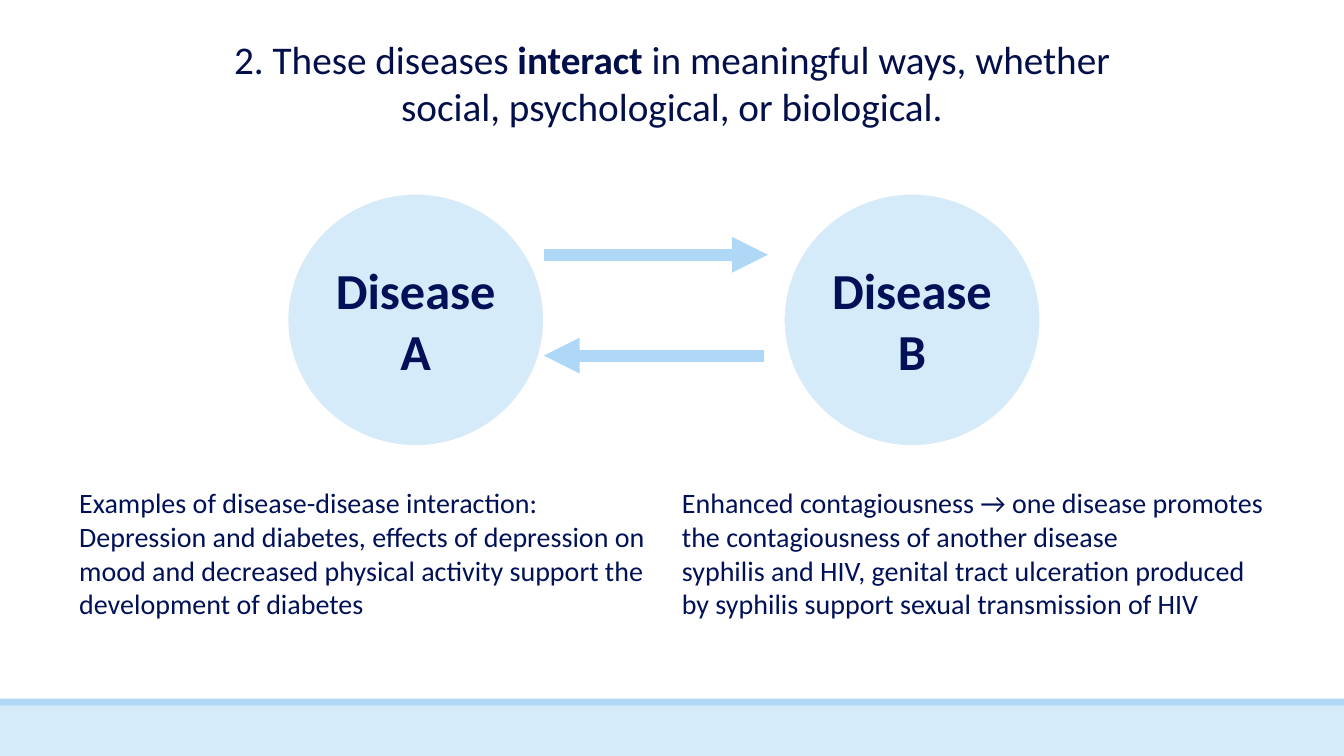
from dataclasses import dataclass

from lxml import etree
from pptx import Presentation
from pptx.dml.color import RGBColor
from pptx.enum import shapes, text
from pptx.oxml import ns
from pptx.util import Pt

TITLE = [
    ("2. These diseases ", False),
    ("interact", True),
    (" in meaningful ways, whether social, psychological, or biological.", False),
]
DISEASES = ["Disease A", "Disease B"]
EXAMPLES = [
    ["Examples of disease-disease interaction: Depression and diabetes, effects of "
     "depression on mood and decreased physical activity support the development of diabetes"],
    ["Enhanced contagiousness → one disease promotes the contagiousness of another disease",
     "syphilis and HIV, genital tract ulceration produced by syphilis support sexual "
     "transmission of HIV"],
]


@dataclass(frozen=True)
class Theme:
    font: str = "Calibri"
    title_color: str = "020F4A"
    text_color: str = "001158"
    accent: str = "AED8F5"
    pale: str = "D6EBFA"
    outline: str = "FFFFFF"
    title_size: int = 28
    circle_size: int = 36
    body_size: int = 20
    arrow_width: float = 8.5


THEME = Theme()
WIDTH, HEIGHT = 960, 540
BAND_HEIGHT, STRIPE_HEIGHT = 36, 5
CIRCLE_LEFT, CIRCLE_TOP, CIRCLE_STEP = 205.5, 138.5, 354.5
CIRCLE_WIDTH, CIRCLE_HEIGHT = 183, 180
ARROW_LEFT = CIRCLE_LEFT + CIRCLE_WIDTH
ARROWS = [(ARROW_LEFT, 548.5, 182), (546, ARROW_LEFT, 254)]
COLUMN_WIDTH, COLUMN_TOP, COLUMN_HEIGHT = 430.5, 343.5, 104.5
COLUMN_LEFT = 49.5


def color(value):
    return RGBColor.from_string(value)


def style_run(run, size, value, bold=False):
    run.font.name = THEME.font
    run.font.size = Pt(size)
    run.font.bold = bold
    run.font.color.rgb = color(value)


def add_shape(slide, kind, left, top, width, height, fill):
    shape = slide.shapes.add_shape(kind, Pt(left), Pt(top), Pt(width), Pt(height))
    shape.shadow.inherit = False
    shape.fill.solid()
    shape.fill.fore_color.rgb = color(fill)
    shape.line.fill.background()
    return shape


def add_text_box(slide, left, top, width, height):
    box = slide.shapes.add_textbox(Pt(left), Pt(top), Pt(width), Pt(height))
    box.text_frame.word_wrap = True
    return box.text_frame


def add_title(slide):
    paragraph = add_text_box(slide, 128, 21.5, 704, 97).paragraphs[0]
    paragraph.alignment = text.PP_ALIGN.CENTER
    for words, bold in TITLE:
        run = paragraph.add_run()
        run.text = words
        style_run(run, THEME.title_size, THEME.title_color, bold)


def add_disease(slide, name, left):
    circle = add_shape(slide, shapes.MSO_SHAPE.OVAL, left, CIRCLE_TOP,
                       CIRCLE_WIDTH, CIRCLE_HEIGHT, THEME.accent)
    fill = circle.fill._xPr.find(ns.qn("a:solidFill"))
    etree.SubElement(fill[0], ns.qn("a:alpha"), val="50000")
    circle.line.color.rgb = color(THEME.outline)
    circle.line.width = Pt(1)
    frame = circle.text_frame
    frame.margin_left = frame.margin_right = Pt(3)
    frame.word_wrap = True
    frame.vertical_anchor = text.MSO_ANCHOR.MIDDLE
    frame.text = name
    frame.paragraphs[0].alignment = text.PP_ALIGN.CENTER
    style_run(frame.paragraphs[0].runs[0], THEME.circle_size, THEME.text_color, True)


def add_arrow(slide, start, end, top):
    arrow = slide.shapes.add_connector(shapes.MSO_CONNECTOR.STRAIGHT,
                                       Pt(start), Pt(top), Pt(end), Pt(top))
    arrow.line.color.rgb = color(THEME.accent)
    arrow.line.width = Pt(THEME.arrow_width)
    etree.SubElement(arrow.line._get_or_add_ln(), ns.qn("a:tailEnd"), type="triangle")
    etree.SubElement(arrow._element.spPr, ns.qn("a:effectLst"))


def add_examples(slide, paragraphs, left):
    frame = add_text_box(slide, left, COLUMN_TOP, COLUMN_WIDTH, COLUMN_HEIGHT)
    frame.text = "\n".join(paragraphs)
    for paragraph in frame.paragraphs:
        style_run(paragraph.runs[0], THEME.body_size, THEME.text_color)


def main():
    presentation = Presentation()
    presentation.slide_width, presentation.slide_height = Pt(WIDTH), Pt(HEIGHT)
    slide = presentation.slides.add_slide(presentation.slide_layouts[6])

    band_top = HEIGHT - BAND_HEIGHT
    rectangle = shapes.MSO_SHAPE.RECTANGLE
    add_shape(slide, rectangle, 0, band_top, WIDTH, BAND_HEIGHT, THEME.pale)
    add_shape(slide, rectangle, 0, band_top - STRIPE_HEIGHT, WIDTH, STRIPE_HEIGHT, THEME.accent)

    add_title(slide)
    for index, name in enumerate(DISEASES):
        add_disease(slide, name, CIRCLE_LEFT + index * CIRCLE_STEP)
    for start, end, top in ARROWS:
        add_arrow(slide, start, end, top)
    for index, paragraphs in enumerate(EXAMPLES):
        add_examples(slide, paragraphs, COLUMN_LEFT + index * COLUMN_WIDTH)

    presentation.save("out.pptx")


if __name__ == "__main__":
    main()
